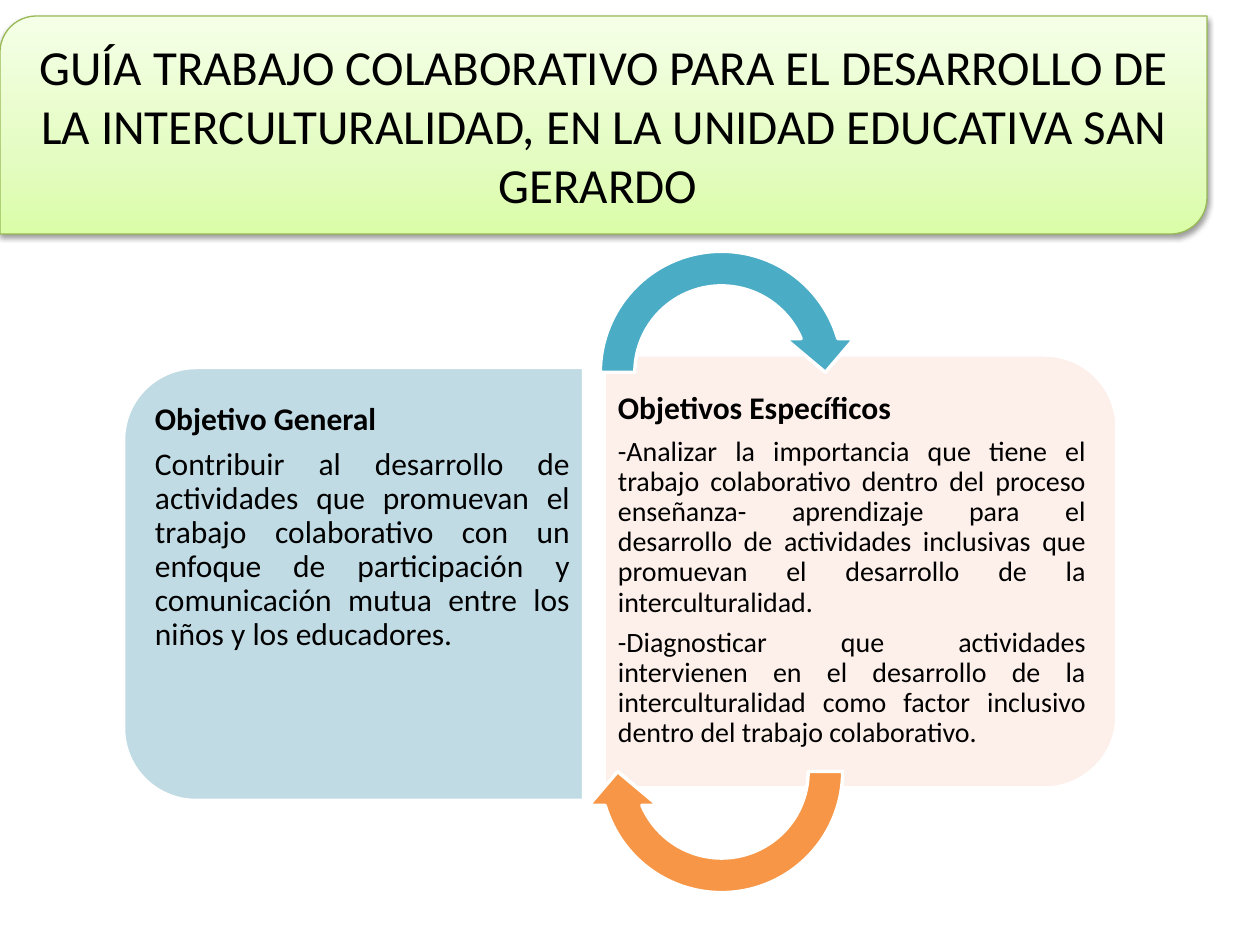
from copy import deepcopy

from lxml.etree import SubElement
from pptx import Presentation
from pptx.dml.color import RGBColor
from pptx.enum.shapes import MSO_SHAPE as Shape
from pptx.enum.text import MSO_ANCHOR as Anchor, MSO_AUTO_SIZE as AutoSize, PP_ALIGN as Align
from pptx.oxml.ns import qn
from pptx.util import Emu, Pt

PX_PER_INCH = 126
BLACK = RGBColor(0x00, 0x00, 0x00)
WHITE = RGBColor(0xFF, 0xFF, 0xFF)
GREEN_LINE = RGBColor(0x98, 0xB9, 0x55)
GREEN_STOPS = [
    (0, RGBColor(0xDA, 0xFD, 0xA7)),
    (0.35, RGBColor(0xE4, 0xFC, 0xC2)),
    (1, RGBColor(0xF5, 0xFF, 0xE7)),
]
PALE_BLUE = RGBColor(0xC1, 0xDB, 0xE5)
PALE_ORANGE = RGBColor(0xFD, 0xEF, 0xE9)
TEAL = RGBColor(0x4B, 0xAC, 0xC6)
ORANGE = RGBColor(0xF7, 0x96, 0x46)


def px(length):
    return Emu(round(length * 914400 / PX_PER_INCH))


class SlideBuilder:
    font_name = "Calibri"
    line_spacing = 0.9
    gap = 0.35

    def __init__(self, slide):
        self.slide = slide

    def style(self, paragraph, size, bold=False, align=Align.LEFT):
        paragraph.alignment = align
        font = paragraph.font
        font.name, font.size, font.bold = self.font_name, Pt(size), bold
        font.color.rgb = BLACK

    def shape(self, kind, box, line, width, adjustments=(), rotation=0):
        shape = self.slide.shapes.add_shape(kind, *map(px, box))
        shape.shadow.inherit = False
        shape.line.color.rgb = line
        shape.line.width = Pt(width)
        shape.rotation = rotation
        for index, value in enumerate(adjustments):
            shape.adjustments[index] = value
        return shape

    def banner(self, box, text):
        shape = self.shape(Shape.ROUND_2_DIAG_RECTANGLE, box, GREEN_LINE, 0.75)
        self.gradient(shape.fill)
        self.drop_shadow(shape)
        frame = shape.text_frame
        frame.word_wrap = True
        frame.auto_size = AutoSize.SHAPE_TO_FIT_TEXT
        frame.vertical_anchor = Anchor.MIDDLE
        frame.text = text
        self.style(frame.paragraphs[0], 28, align=Align.CENTER)

    def gradient(self, fill):
        """Fill from bottom to top with the three green stops."""
        fill.gradient()
        fill.gradient_angle = 90
        first = fill._fill._gradFill.find(qn("a:gsLst"))[0]
        first.addnext(deepcopy(first))
        for stop, (position, color) in zip(fill.gradient_stops, GREEN_STOPS):
            stop.position = position
            stop.color.rgb = color

    def drop_shadow(self, shape):
        effects = shape._element.spPr.find(qn("a:effectLst"))
        shadow = SubElement(effects, qn("a:outerShdw"), blurRad="40000",
                            dist="20000", dir="5400000", rotWithShape="0")
        color = SubElement(shadow, qn("a:srgbClr"), val=str(BLACK))
        SubElement(color, qn("a:alpha"), val="38000")

    def panel(self, box, rotation, color):
        shape = self.shape(Shape.ROUND_2_SAME_RECTANGLE, box, WHITE, 2, (0.167, 0), rotation)
        shape.fill.solid()
        shape.fill.fore_color.rgb = color

    def arrow(self, box, rotation, color):
        shape = self.shape(Shape.CIRCULAR_ARROW, box, WHITE, 2,
                           (0.125, 11.42, 204.58, 108, 0.125), rotation)
        shape.fill.solid()
        shape.fill.fore_color.rgb = color

    def text(self, box, side_margins, heading, heading_align, body, body_size):
        frame = self.slide.shapes.add_textbox(*map(px, box)).text_frame
        frame.word_wrap = True
        frame.margin_left, frame.margin_right = map(px, side_margins)
        frame.margin_top = frame.margin_bottom = px(15)
        frame.text = "\n".join([heading, *body])
        for index, paragraph in enumerate(frame.paragraphs):
            is_heading = index == 0
            size = 18 if is_heading else body_size
            self.style(paragraph, size, is_heading, heading_align if is_heading else Align.JUSTIFY)
            paragraph.line_spacing = self.line_spacing
            paragraph.space_after = Pt(size * self.gap)


def main():
    presentation = Presentation()
    presentation.slide_width, presentation.slide_height = px(1260), px(945)
    builder = SlideBuilder(presentation.slides.add_slide(presentation.slide_layouts[6]))

    builder.banner(
        (0, 16, 1207, 218),
        "GUÍA TRABAJO COLABORATIVO PARA EL DESARROLLO DE LA INTERCULTURALIDAD, "
        "EN LA UNIDAD EDUCATIVA SAN GERARDO ",
    )

    builder.panel((137, 354, 433, 460), 270, PALE_BLUE)
    builder.text(
        (146, 388, 438, 392), (9, 14), "Objetivo General", Align.LEFT,
        ["Contribuir al desarrollo de actividades que promuevan el trabajo colaborativo con un "
         "enfoque de participación y comunicación mutua entre los niños y los educadores. "],
        18,
    )

    builder.panel((644, 315, 433, 513), 90, PALE_ORANGE)
    builder.text(
        (604, 377, 491, 392), (14, 9), "Objetivos Específicos ", Align.JUSTIFY,
        ["-Analizar la importancia que tiene el trabajo colaborativo dentro del proceso enseñanza- "
         "aprendizaje para el desarrollo de actividades inclusivas que promuevan el desarrollo de "
         "la interculturalidad.",
         "-Diagnosticar que actividades intervienen en el desarrollo de la interculturalidad como "
         "factor inclusivo dentro del trabajo colaborativo. "],
        16,
    )

    for top, rotation, color in ((234, 0, TEAL), (633, 180, ORANGE)):
        builder.arrow((583, top, 277, 277), rotation, color)

    presentation.save("out.pptx")


if __name__ == "__main__":
    main()
